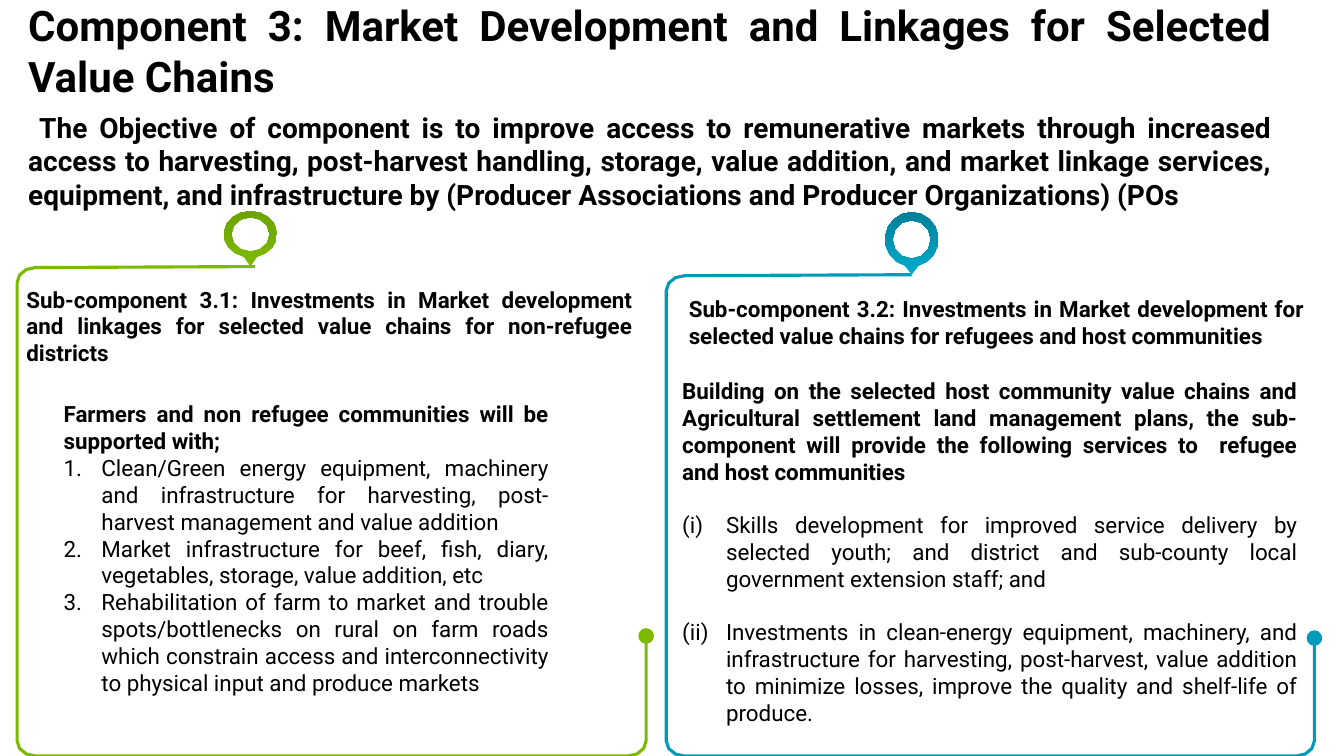
import math
from dataclasses import dataclass

import pptx
import pptx.dml.color
import pptx.enum.text
import pptx.oxml
import pptx.oxml.ns
import pptx.util

GRID = 0.1  # inches per column and per row
SLIDE_COLUMNS, SLIDE_ROWS = 133.33, 75


@dataclass(frozen=True)
class Theme:
    font: str = "Roboto"
    text: str = "000000"
    title_size: int = 30
    objective_size: int = 20
    body_size: int = 16
    body_gap: float = 19
    line_width: float = 2.25
    green: tuple = ("7CBA01", "7CBA01", "6DA301")  # line, pin bottom, pin top
    blue: tuple = ("009BBA", "00AACC", "00809A")


def units(count):
    return pptx.util.Inches(count * GRID)


def color(code):
    return pptx.dml.color.RGBColor.from_string(code)


def arc(center_x, center_y, radius_x, radius_y, start, end, steps):
    """Return points along an ellipse; angles in degrees, clockwise from the right."""
    angles = [math.radians(start + (end - start) * i / steps) for i in range(steps + 1)]
    return [(center_x + radius_x * math.cos(a), center_y + radius_y * math.sin(a))
            for a in angles]


def write(paragraph, text, size, bold=False, theme=Theme(), before=0,
          hanging=0, first_indent=0, numbering=None):
    """Fill a justified paragraph; indents are in grid columns."""
    paragraph.alignment = pptx.enum.text.PP_ALIGN.JUSTIFY
    paragraph.space_before = pptx.util.Pt(before)
    run = paragraph.add_run()
    run.text = text
    run.font.name = theme.font
    run.font.size = pptx.util.Pt(size)
    run.font.bold = bold
    run.font.color.rgb = color(theme.text)
    properties = paragraph._p.get_or_add_pPr()
    properties.set("marL", str(units(hanging)))
    properties.set("indent", str(units(first_indent - hanging)))
    if numbering:
        bullet = pptx.oxml.parse_xml(
            f'<a:buAutoNum {pptx.oxml.ns.nsdecls("a")} type="{numbering}"/>')
        properties.append(bullet)


class SlideBuilder:
    def __init__(self, presentation, theme):
        self.theme = theme
        title_only = presentation.slide_layouts[5]
        self.slide = presentation.slides.add_slide(title_only)

    def place(self, shape, box, inset=True):
        shape.left, shape.top, shape.width, shape.height = map(units, box)
        frame = shape.text_frame
        frame.word_wrap = True
        frame.auto_size = pptx.enum.text.MSO_AUTO_SIZE.NONE
        frame.vertical_anchor = pptx.enum.text.MSO_ANCHOR.TOP
        if not inset:
            frame.margin_left = frame.margin_right = 0
            frame.margin_top = frame.margin_bottom = 0
        return frame

    def title(self, text, box):
        frame = self.place(self.slide.shapes.title, box, inset=False)
        write(frame.paragraphs[0], text, self.theme.title_size, bold=True, theme=self.theme)

    def text(self, box, paragraphs, inset=True):
        """Add a text box from (text, format) pairs."""
        shape = self.slide.shapes.add_textbox(0, 0, 0, 0)
        frame = self.place(shape, box, inset=inset)
        for index, (text, style) in enumerate(paragraphs):
            paragraph = frame.add_paragraph() if index else frame.paragraphs[0]
            write(paragraph, text, theme=self.theme,
                  **{"size": self.theme.body_size, **style})

    def outline(self, contours, close):
        contours = [[(units(x), units(y)) for x, y in points] for points in contours]
        builder = self.slide.shapes.build_freeform(*contours[0][0], scale=1.0)
        for index, points in enumerate(contours):
            if index:
                builder.move_to(*points[0])
            builder.add_line_segments(points[1:], close=close)
        shape = builder.convert_to_shape()
        shape.shadow.inherit = False
        return shape

    def frame(self, left, right, dot_row, top, end, palette):
        """Draw the open rounded frame from its dot round to the end below the pin."""
        radius_x, radius_y = 1.8, 1.5
        low = SLIDE_ROWS - radius_y
        corners = [(right - radius_x, low, 0), (left + radius_x, low, 90),
                   (left + radius_x, top + radius_y, 180)]
        points = [(right, dot_row)]
        for x, y, start in corners:
            points += arc(x, y, radius_x, radius_y, start, start + 90, 3)
        shape = self.outline([points + [end]], close=False)
        shape.fill.background()
        shape.line.color.rgb = color(palette[0])
        shape.line.width = pptx.util.Pt(self.theme.line_width)
        shape.line._get_or_add_ln().append(pptx.oxml.parse_xml(
            f'<a:headEnd {pptx.oxml.ns.nsdecls("a")} type="oval" w="lg" len="lg"/>'))

    def pin(self, center_row, outer_height, inner_height, tip, palette):
        """Draw a ring with a small pointer ending at the tip."""
        center = (tip[0], center_row)
        outer = arc(*center, 2.65, outer_height, 104, 436, 16) + [tip]
        hole = arc(*center, 1.9, inner_height, 360, 30, 11)
        shape = self.outline([outer, hole], close=True)
        shape.line.fill.background()
        shape.fill.gradient()
        shape.fill.gradient_angle = 90
        for stop, code in zip(shape.fill.gradient_stops, palette[1:]):
            stop.color.rgb = color(code)


def main():
    theme = Theme()
    presentation = pptx.Presentation()
    presentation.slide_width = units(SLIDE_COLUMNS)
    presentation.slide_height = units(SLIDE_ROWS)
    builder = SlideBuilder(presentation, theme)

    bold = {"bold": True}
    numbered = {"hanging": 3.75, "numbering": "arabicPeriod"}
    roman = {"hanging": 4.35, "numbering": "romanLcParenBoth", "before": theme.body_gap}

    builder.title("Component 3: Market Development and Linkages for Selected Value Chains",
                  (2.8, 0, 123.4, 10.2))

    builder.frame(66.1, 130.4, 63.3, 27.35, (90.45, 27.25), theme.blue)
    builder.text((67.35, 28.8, 63, 6.4), [
        ("Sub-component 3.2: Investments in Market development for selected value "
         "chains for refugees and host communities", bold)])
    builder.pin(23.75, 2.7, 1.9, (90.45, 27.25), theme.blue)
    builder.frame(1.7, 64.1, 63.1, 26.55, (25.3, 26.45), theme.green)
    builder.text((1.63, 27.85, 62.1, 9.1), [
        ("Sub-component 3.1: Investments in Market development and linkages for "
         "selected value chains for non-refugee districts", bold)])
    builder.pin(23.25, 2.3, 1.7, (24.85, 26.45), theme.green)

    builder.text((2.8, 10.95, 123.4, 10.2), [
        ("The Objective of component is to improve access to remunerative markets through "
         "increased access to harvesting, post-harvest handling, storage, value addition, "
         "and market linkage services, equipment, and infrastructure by (Producer "
         "Associations and Producer Organizations) (POs",
         {"bold": True, "size": theme.objective_size, "first_indent": 1.1})], inset=False)
    builder.text((5.33, 39.23, 50.1, 41.4), [
        ("Farmers and non refugee communities will be supported with;", bold),
        ("Clean/Green energy equipment, machinery and infrastructure for harvesting, "
         "post-harvest management and value addition", numbered),
        ("Market infrastructure for beef, fish, diary, vegetables, storage, value "
         "addition, etc", numbered),
        ("Rehabilitation of farm to market and trouble spots/bottlenecks on rural on farm "
         "roads which constrain access and interconnectivity to physical input and "
         "produce markets", numbered)])
    builder.text((66.7, 36.95, 63, 36), [
        ("Building on the selected host community value chains and Agricultural settlement "
         "land management plans, the sub-component will provide the following services to  "
         "refugee and host communities", bold),
        ("Skills development for improved service delivery by selected youth; and district "
         "and sub-county local government extension staff; and", roman),
        ("Investments in clean-energy equipment, machinery, and infrastructure for "
         "harvesting, post-harvest, value addition to minimize losses, improve the quality "
         "and shelf-life of produce.", roman)])

    presentation.save("out.pptx")


if __name__ == "__main__":
    main()
